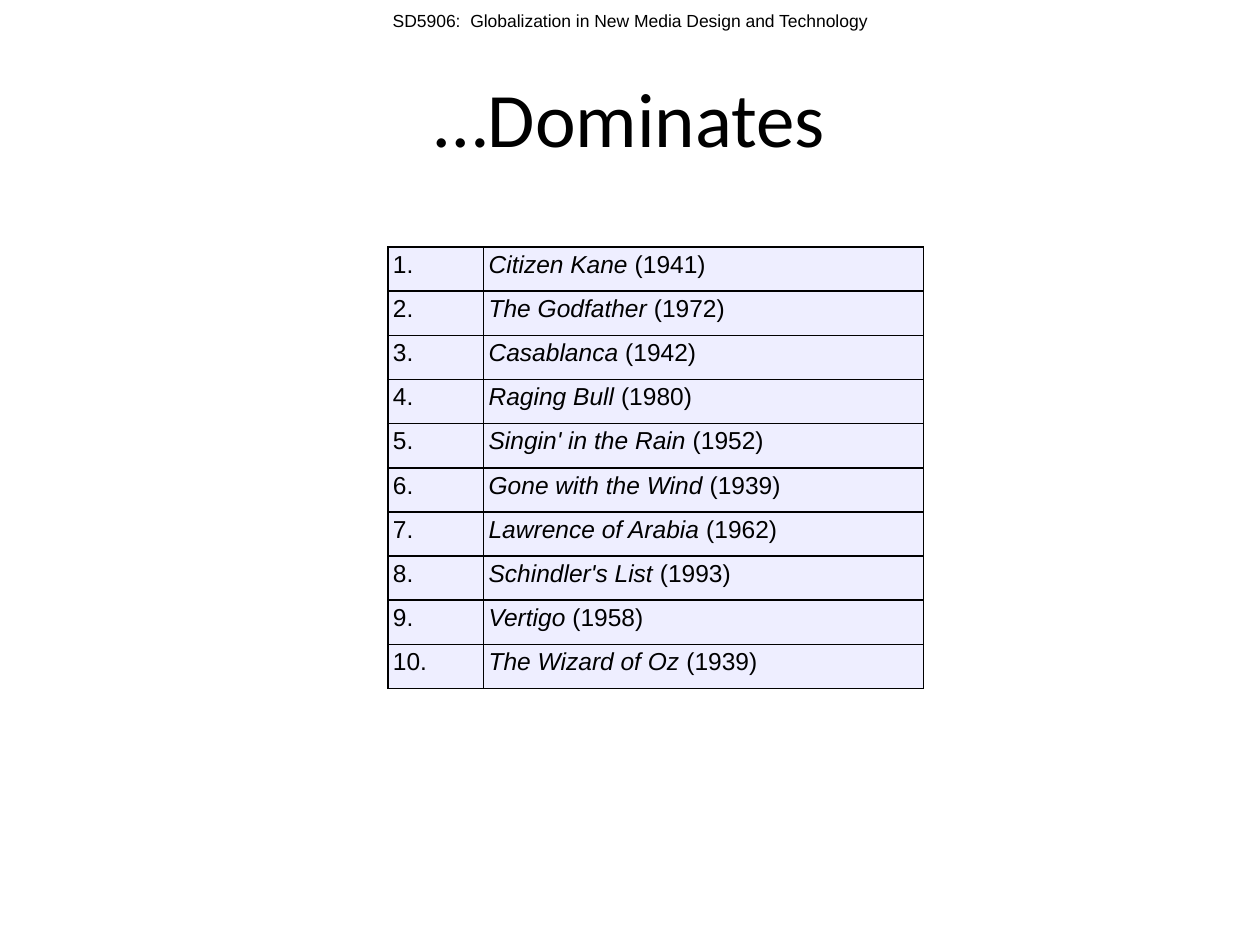
from lxml.etree import SubElement as Sub
from pptx import Presentation
from pptx.dml.color import RGBColor
from pptx.enum.text import MSO_ANCHOR as Anchor, PP_ALIGN as Align
from pptx.oxml.ns import qn
from pptx.util import Cm, Pt

BLACK = RGBColor(0, 0, 0)
LILAC = RGBColor(0xEE, 0xEE, 0xFF)

FILMS = [
    ("Citizen Kane", 1941),
    ("The Godfather", 1972),
    ("Casablanca", 1942),
    ("Raging Bull", 1980),
    ("Singin' in the Rain", 1952),
    ("Gone with the Wind", 1939),
    ("Lawrence of Arabia", 1962),
    ("Schindler's List", 1993),
    ("Vertigo", 1958),
    ("The Wizard of Oz", 1939),
]


def write(para, text, size=14, font="Arial", color=BLACK, italic=False):
    """Add one formatted run to a paragraph."""
    run = para.add_run()
    run.text = text
    run.font.size = Pt(size)
    run.font.name = font
    run.font.color.rgb = color
    run.font.italic = italic


def add_line(slide, box, text, **style):
    """Place one centred line of text in a box."""
    frame = slide.shapes.add_textbox(*box).text_frame
    frame.word_wrap = True
    frame.vertical_anchor = Anchor.MIDDLE
    para = frame.paragraphs[0]
    para.alignment = Align.CENTER
    write(para, text, **style)


def style_cell(cell):
    """Give a cell its borders, fill, margins and line spacing."""
    props = cell._tc.get_or_add_tcPr()
    for side in ("a:lnL", "a:lnR", "a:lnT", "a:lnB"):
        line = Sub(props, qn(side), w=str(Pt(1)))
        fill = Sub(line, qn("a:solidFill"))
        Sub(fill, qn("a:srgbClr"), val=str(BLACK))
    cell.fill.solid()
    cell.fill.fore_color.rgb = LILAC
    cell.margin_left = cell.margin_right = Cm(0.1)
    cell.margin_top = cell.margin_bottom = Cm(0.1)
    cell.vertical_anchor = Anchor.MIDDLE
    cell.text_frame.paragraphs[0].line_spacing = Pt(10.8)


def add_films(slide, box, films, rank_w):
    """Place the ranked film table in a box."""
    table = slide.shapes.add_table(len(films), 2, *box).table
    table.first_row = table.horz_banding = False
    table.columns[0].width = rank_w
    table.columns[1].width = box[2] - rank_w
    for rank, (row, (name, year)) in enumerate(zip(table.rows, films), 1):
        for cell in row.cells:
            style_cell(cell)
        left, right = (c.text_frame.paragraphs[0] for c in row.cells)
        write(left, f"{rank}.")
        write(right, name, italic=True)
        write(right, f" ({year})")


def main():
    """Build and save the slide."""
    deck = Presentation()
    deck.slide_width, deck.slide_height = Cm(25.4), Cm(19.05)
    slide = deck.slides.add_slide(deck.slide_layouts[6])
    add_line(slide, (0, 0, deck.slide_width, Cm(0.84)),
             "SD5906:  Globalization in New Media Design and Technology", size=10)
    add_line(slide, (Cm(1.27), Cm(0.76), Cm(22.86), Cm(3.18)),
             "…Dominates", size=44, font="Calibri")
    add_films(slide, (Cm(7.82), Cm(4.98), Cm(10.8), Cm(8.9)), FILMS, Cm(1.93))
    deck.save("out.pptx")


if __name__ == "__main__":
    main()
